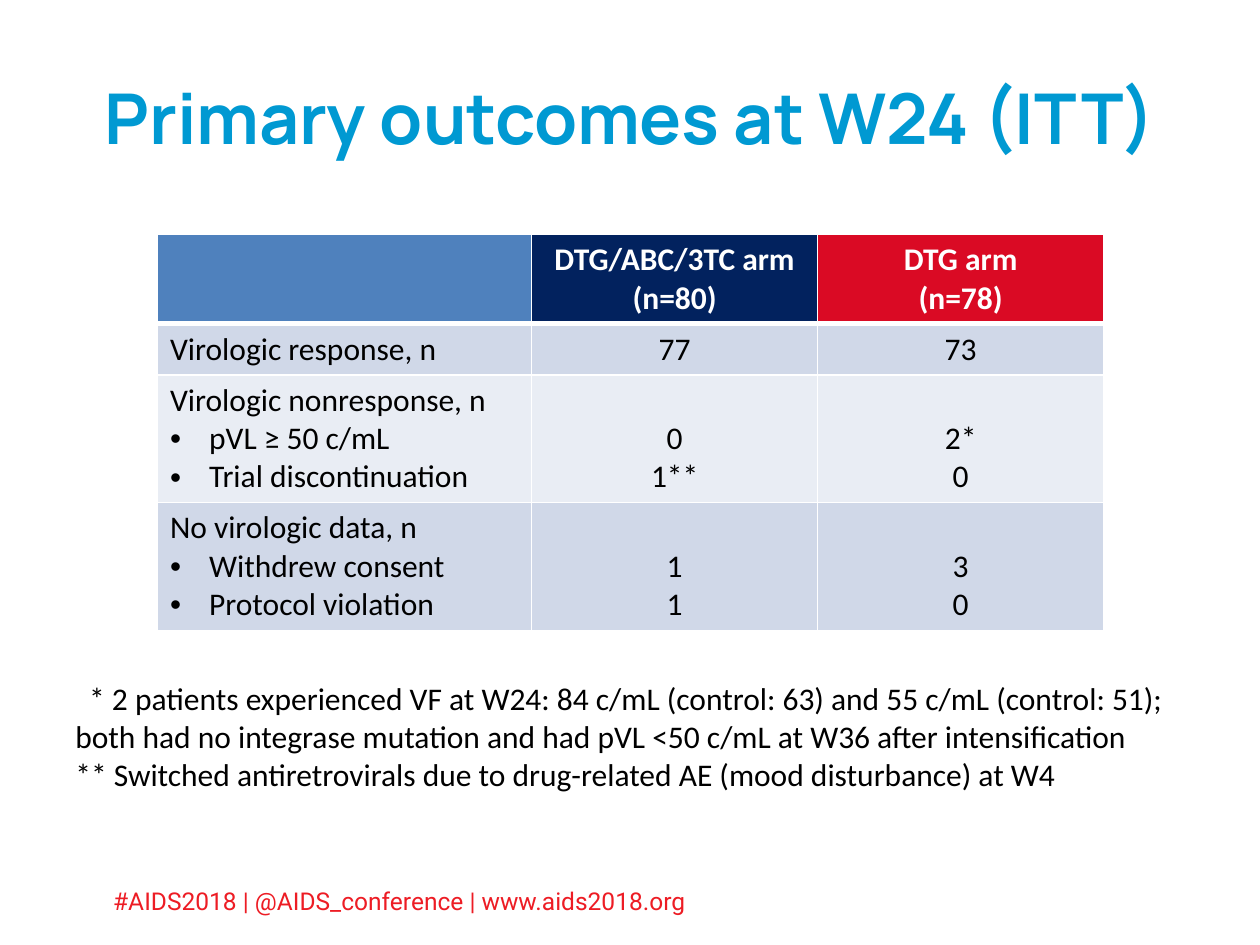
from lxml import etree
from pptx import Presentation
from pptx.dml.color import RGBColor
from pptx.enum.text import MSO_ANCHOR, PP_ALIGN
from pptx.oxml.ns import qn
from pptx.util import Inches, Pt

COLORS = {
    "title": "0099D2", "footer": "ED1C24", "text": "000000", "white": "FFFFFF",
    "corner": "4F81BD", "combined": "02225E", "single": "DA0A24",
    "band_dark": "D0D8E8", "band_light": "E9EDF4",
}
FORMATS = {
    "title": {"name": "Manrope", "size": Pt(40), "bold": True},
    "header": {"name": "Calibri", "size": Pt(18), "bold": True},
    "body": {"name": "Calibri", "size": Pt(18), "bold": False},
    "footer": {"name": "Roboto", "size": Pt(14), "bold": False},
}

TITLE = "Primary outcomes at W24 (ITT)"
HEADERS = [
    ([], "corner"),
    (["DTG/ABC/3TC arm", "(n=80)"], "combined"),
    (["DTG arm", "(n=78)"], "single"),
]
# Each outcome: label lines (those after the first are bulleted), then one list per arm
OUTCOMES = [
    (["Virologic response, n"], ["77"], ["73"]),
    (["Virologic nonresponse, n", "pVL ≥ 50 c/mL", "Trial discontinuation"],
     ["0", "1**"], ["2*", "0"]),
    (["No virologic data, n", "Withdrew consent", "Protocol violation"],
     ["1", "1"], ["3", "0"]),
]
FOOTNOTES = [
    "* 2 patients experienced VF at W24: 84 c/mL (control: 63) and 55 c/mL (control: 51); "
    "both had no integrase mutation and had pVL <50 c/mL at W36 after intensification",
    "** Switched antiretrovirals due to drug-related AE (mood disturbance) at W4",
]
FOOTER = "#AIDS2018 | @AIDS_conference | www.aids2018.org"

COLUMN_WIDTHS = [2.97, 2.27, 2.27]
LINE_HEIGHT, CELL_PADDING = 0.305, 0.1


def indent(paragraph, first_line, left=0, bullet=None):
    properties = paragraph._p.get_or_add_pPr()
    properties.set("marL", str(Inches(left)))
    properties.set("indent", str(Inches(first_line)))
    if bullet:
        etree.SubElement(properties, qn("a:buFont")).set("typeface", "Arial")
        etree.SubElement(properties, qn("a:buChar")).set("char", bullet)


def write(frame, lines, style, color, align=PP_ALIGN.LEFT):
    """Fill the frame with one formatted paragraph per line and return the paragraphs."""
    frame.text = "\n".join(lines)
    for paragraph in frame.paragraphs:
        paragraph.alignment = align
        for run in paragraph.runs:
            for attribute, value in FORMATS[style].items():
                setattr(run.font, attribute, value)
            run.font.color.rgb = RGBColor.from_string(COLORS[color])
    return frame.paragraphs


def add_text(slide, box, lines, style, color):
    frame = slide.shapes.add_textbox(*map(Inches, box)).text_frame
    frame.word_wrap = True
    return write(frame, lines, style, color)


def paint_cell(cell, fill, top, bottom):
    """Draw white borders, with top and bottom widths in points, then the fill."""
    properties = cell._tc.get_or_add_tcPr()
    for side, width in {"L": 1, "R": 1, "T": top, "B": bottom}.items():
        line = etree.SubElement(properties, qn(f"a:ln{side}"), w=str(Pt(width)))
        solid = etree.SubElement(line, qn("a:solidFill"))
        etree.SubElement(solid, qn("a:srgbClr"), val=COLORS["white"])
    cell.fill.solid()
    cell.fill.fore_color.rgb = RGBColor.from_string(COLORS[fill])


def add_outcomes_table(slide):
    line_counts = [2] + [len(labels) for labels, *_ in OUTCOMES]
    heights = [count * LINE_HEIGHT + CELL_PADDING for count in line_counts]
    table = slide.shapes.add_table(
        len(heights), len(COLUMN_WIDTHS), Inches(1.25), Inches(1.86),
        Inches(sum(COLUMN_WIDTHS)), Inches(sum(heights))).table
    for column, width in zip(table.columns, COLUMN_WIDTHS):
        column.width = Inches(width)
    for row, height in zip(table.rows, heights):
        row.height = Inches(height)

    for column, (lines, fill) in enumerate(HEADERS):
        cell = table.cell(0, column)
        write(cell.text_frame, lines, "header", "white", PP_ALIGN.CENTER)
        paint_cell(cell, fill, top=1, bottom=3)

    for row, outcome in enumerate(OUTCOMES, start=1):
        for column, lines in enumerate(outcome):
            cell = table.cell(row, column)
            align = PP_ALIGN.CENTER if column else PP_ALIGN.LEFT
            paragraphs = write(cell.text_frame, lines, "body", "text", align)
            if column:
                cell.vertical_anchor = MSO_ANCHOR.BOTTOM
            else:
                for paragraph in paragraphs[1:]:
                    indent(paragraph, -0.31, left=0.31, bullet="•")
            paint_cell(cell, "band_dark" if row % 2 else "band_light",
                       top=3 if row == 1 else 1, bottom=1)


def main():
    presentation = Presentation()
    presentation.slide_width, presentation.slide_height = Inches(10), Inches(7.5)
    slide = presentation.slides.add_slide(presentation.slide_layouts[5])

    add_text(slide, (0.8, 6.98, 7.26, 0.34), [FOOTER], "footer", "footer")

    title = slide.shapes.title
    title.left, title.top, title.width, title.height = map(Inches, (0.5, 0.3, 9, 1.25))
    title.text_frame.vertical_anchor = MSO_ANCHOR.MIDDLE
    write(title.text_frame, [TITLE], "title", "title", PP_ALIGN.CENTER)

    add_outcomes_table(slide)

    notes = add_text(slide, (0.5, 5.34, 9, 1.01), FOOTNOTES, "body", "text")
    indent(notes[0], 0.11)

    presentation.save("out.pptx")


if __name__ == "__main__":
    main()
